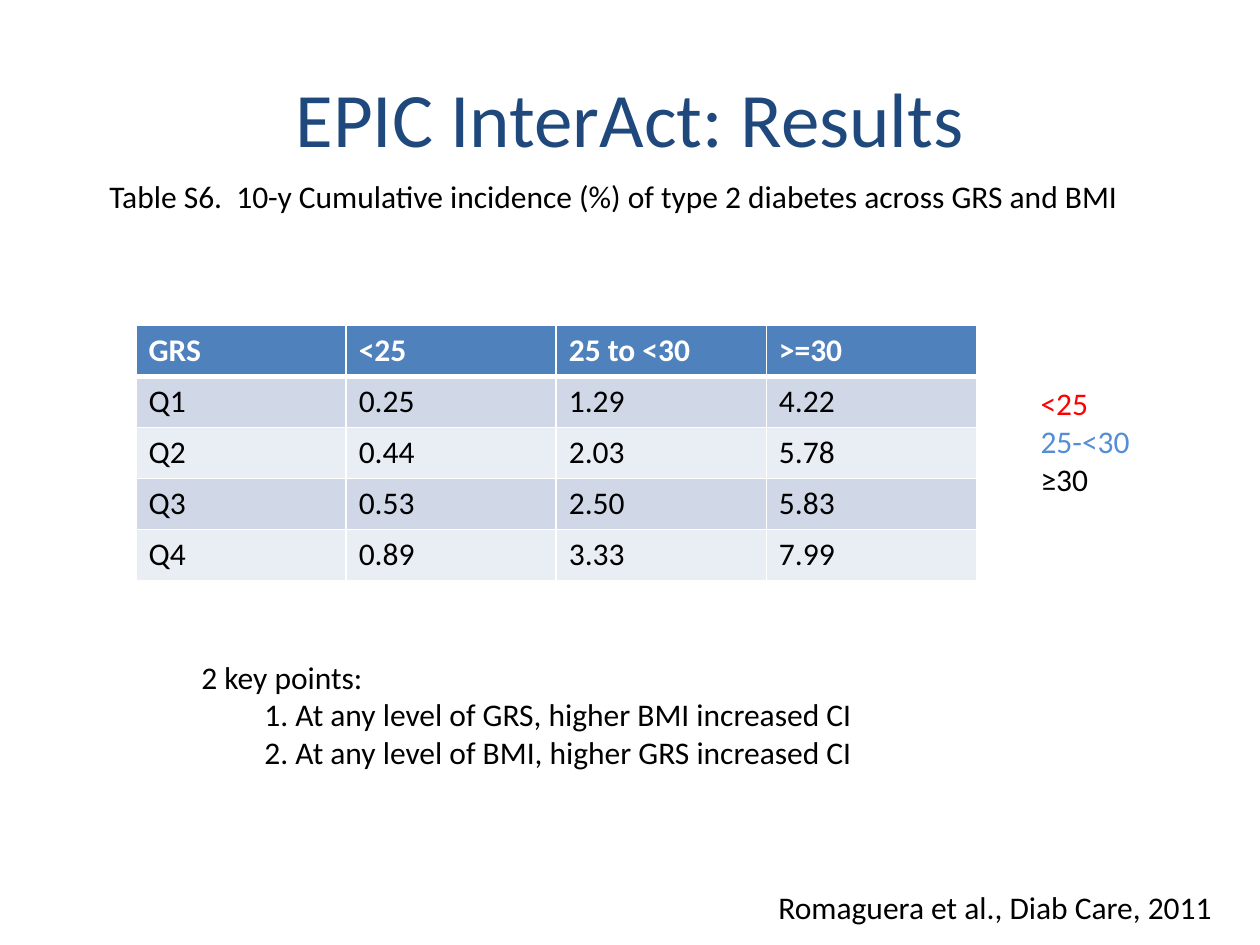
from dataclasses import dataclass

from lxml import etree
from pptx import Presentation
from pptx.dml.color import RGBColor
from pptx.enum.text import MSO_ANCHOR, MSO_AUTO_SIZE, PP_ALIGN
from pptx.oxml.ns import qn
from pptx.util import Inches, Pt

CENTER = PP_ALIGN.CENTER
MIDDLE = MSO_ANCHOR.MIDDLE
FIT_SHAPE = MSO_AUTO_SIZE.SHAPE_TO_FIT_TEXT

FONT = "Calibri"
BLACK, WHITE, RED = "000000", "FFFFFF", "FF0000"
NAVY, LIGHT_BLUE, HEADER_BLUE = "1F497D", "558ED5", "4F81BD"
BANDS = ("D0D8E8", "E9EDF4")
TITLE_ONLY = 5


@dataclass(frozen=True)
class Line:
    text: str
    color: str = BLACK


@dataclass(frozen=True)
class Note:
    left: float
    top: float
    width: float
    height: float
    lines: tuple[Line, ...]


CITATION = Note(6.08, 7, 3.68, 0.4, (Line("Romaguera et al., Diab Care, 2011"),))
BMI_KEY = Note(8.16, 3, 0.92, 1.01, (
    Line("<25", RED), Line("25-<30", LIGHT_BLUE), Line("≥30")))
CAPTION = Note(0.77, 1.36, 8.24, 0.4, (
    Line("Table S6.  10-y Cumulative incidence (%) of type 2 diabetes across GRS and BMI"),))
KEY_POINTS = Note(1.5, 5.17, 5.93, 1.01, (
    Line("2 key points:"),
    Line("\t1. At any level of GRS, higher BMI increased CI"),
    Line("\t2. At any level of BMI, higher GRS increased CI")))

INCIDENCE = (
    ("GRS", "<25", "25 to <30", ">=30"),
    ("Q1", "0.25", "1.29", "4.22"),
    ("Q2", "0.44", "2.03", "5.78"),
    ("Q3", "0.53", "2.50", "5.83"),
    ("Q4", "0.89", "3.33", "7.99"),
)


def rgb(color: str) -> RGBColor:
    return RGBColor.from_string(color)


def add_run(paragraph, text: str, color: str, size: int = 18, bold: bool = False) -> None:
    run = paragraph.add_run()
    run.text = text
    run.font.name = FONT
    run.font.size = Pt(size)
    run.font.bold = bold
    run.font.color.rgb = rgb(color)


def set_title(slide, text: str) -> None:
    title = slide.shapes.title
    title.left, title.top = Inches(0.5), Inches(0.3)
    title.width, title.height = Inches(9), Inches(1.25)
    title.text_frame.vertical_anchor = MIDDLE
    paragraph = title.text_frame.paragraphs[0]
    paragraph.alignment = CENTER
    add_run(paragraph, text, NAVY, size=44)


def add_note(slide, note: Note) -> None:
    box = slide.shapes.add_textbox(
        Inches(note.left), Inches(note.top), Inches(note.width), Inches(note.height))
    frame = box.text_frame
    frame.word_wrap = False
    frame.auto_size = FIT_SHAPE
    for index, line in enumerate(note.lines):
        paragraph = frame.add_paragraph() if index else frame.paragraphs[0]
        add_run(paragraph, line.text, line.color)


def set_borders(cell, top: int, bottom: int) -> None:
    """Draw white cell borders; they must precede the fill in the XML."""
    properties = cell._tc.get_or_add_tcPr()
    widths = {"a:lnL": 1, "a:lnR": 1, "a:lnT": top, "a:lnB": bottom}
    for tag, width in widths.items():
        border = etree.SubElement(properties, qn(tag), w=str(Pt(width)))
        fill = etree.SubElement(border, qn("a:solidFill"))
        etree.SubElement(fill, qn("a:srgbClr"), val=WHITE)


def add_incidence_table(slide, rows: tuple[tuple[str, ...], ...]) -> None:
    table = slide.shapes.add_table(
        len(rows), len(rows[0]), Inches(1.08), Inches(2.58), Inches(6.67), Inches(2.03)).table
    for row_index, values in enumerate(rows):
        is_header = row_index == 0
        for column_index, value in enumerate(values):
            cell = table.cell(row_index, column_index)
            # The rule between header and body is the heavy one
            set_borders(cell, top=3 if row_index == 1 else 1, bottom=3 if is_header else 1)
            cell.fill.solid()
            cell.fill.fore_color.rgb = rgb(
                HEADER_BLUE if is_header else BANDS[(row_index - 1) % 2])
            add_run(cell.text_frame.paragraphs[0], value,
                    WHITE if is_header else BLACK, bold=is_header)


def main() -> None:
    presentation = Presentation()
    presentation.slide_width, presentation.slide_height = Inches(10), Inches(7.5)
    slide = presentation.slides.add_slide(presentation.slide_layouts[TITLE_ONLY])

    # Heading, citation and BMI key
    set_title(slide, "EPIC InterAct: Results")
    add_note(slide, CITATION)
    add_note(slide, BMI_KEY)

    # Table with its caption and conclusions
    add_incidence_table(slide, INCIDENCE)
    add_note(slide, CAPTION)
    add_note(slide, KEY_POINTS)

    presentation.save("out.pptx")


if __name__ == "__main__":
    main()
